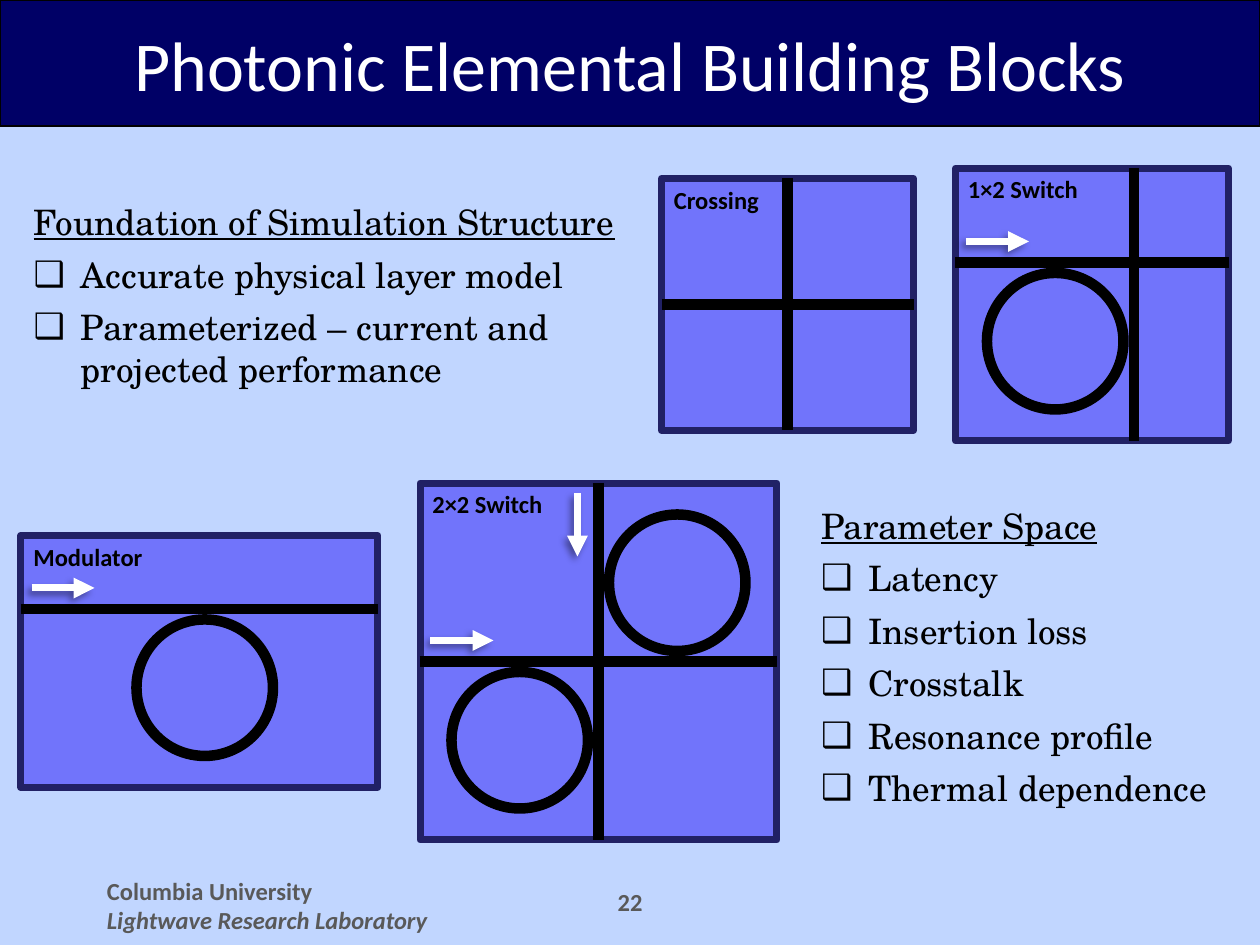
from lxml import etree
from pptx import Presentation
from pptx import util as u
from pptx.dml.color import RGBColor
from pptx.enum import shapes, text
from pptx.oxml import ns

BLACK, WHITE, GREY = "000000", "FFFFFF", "595959"
SANS, SERIF = "Calibri", "TeX Gyre Schola"
RING = 13
ARROW = 6
LABEL = {"name": SANS, "size": u.Pt(14), "bold": True}
LIST = {"name": SERIF, "size": u.Pt(20)}

# Offsets within a device are measured from its top left corner.
DEVICES = [
    {"label": "Modulator", "frame": (2, 51, 34, 24), "rows": [7], "columns": [],
     "rings": [(11, 8)], "arrows": [(1, 5, ARROW, 0)]},
    {"label": "2×2 Switch", "frame": (40, 46, 34, 34), "rows": [17], "columns": [17],
     "rings": [(3, 18), (18, 3)], "arrows": [(1, 15, ARROW, 0), (15, 1, 0, ARROW)]},
    {"label": "Crossing", "frame": (63, 17, 24, 24), "rows": [12], "columns": [12],
     "rings": [], "arrows": []},
    {"label": "1×2 Switch", "frame": (91, 16, 26, 26), "rows": [9], "columns": [17],
     "rings": [(3, 10)], "arrows": [(1, 7, ARROW, 0)]},
]


def grid(*steps):
    """Turn grid steps, twelve to 2.54 cm, into lengths."""
    return [u.Cm(step * 2.54 / 12) for step in steps]


def colour(value):
    return RGBColor.from_string(value)


def add_xml(parent, tag, **attributes):
    return etree.SubElement(parent, ns.qn(tag), attributes)


def place(shape, *steps):
    shape.left, shape.top, shape.width, shape.height = grid(*steps)


def write(para, words, hue, formats):
    span = para.add_run()
    span.text = words
    span.font.color.rgb = colour(hue)
    for name, value in formats.items():
        setattr(span.font, name, value)


def add_label(parent, steps, lines, hue, **options):
    """Add a text box; each line is a pair of words and extra formats."""
    box = parent.add_textbox(*grid(*steps))
    frame = box.text_frame
    frame.word_wrap = True
    frame.vertical_anchor = options.get("anchor", text.MSO_ANCHOR.TOP)
    for index, (words, extra) in enumerate(lines):
        para = frame.add_paragraph() if index else frame.paragraphs[0]
        para.alignment = options.get("align", text.PP_ALIGN.LEFT)
        write(para, words, hue, LABEL | extra)


def add_outline(parent, kind, steps, line, weight, fill=None):
    shape = parent.add_shape(kind, *grid(*steps))
    shape.shadow.inherit = False
    if fill:
        shape.fill.solid()
        shape.fill.fore_color.rgb = colour(fill)
    else:
        shape.fill.background()
    shape.line.color.rgb = colour(line)
    shape.line.width = u.Pt(weight)
    return shape


def add_line(parent, x, y, across, down, hue, weight):
    """Add a straight line and return it with its empty effect list."""
    line = parent.add_connector(shapes.MSO_CONNECTOR.STRAIGHT,
                                *grid(x, y, x + across, y + down))
    line.line.color.rgb = colour(hue)
    line.line.width = u.Pt(weight)
    return line, add_xml(line._element.spPr, "a:effectLst")


def add_arrow(parent, *steps):
    arrow, effects = add_line(parent, *steps, WHITE, 4)
    add_xml(arrow.line._get_or_add_ln(), "a:tailEnd", type="triangle")
    shadow = add_xml(effects, "a:outerShdw", blurRad=str(u.Pt(4)), dist=str(u.Pt(3)),
                     dir=str(135 * 60000), algn="tr", rotWithShape="0")
    shade = add_xml(shadow, "a:srgbClr", val=BLACK)
    add_xml(shade, "a:alpha", val="40000")


def add_device(page, device):
    parent = page.shapes.add_group_shape().shapes
    left, top, width, height = device["frame"]
    add_outline(parent, shapes.MSO_SHAPE.RECTANGLE, device["frame"], "212165", 4, "7174FB")
    for x, y in device["rings"]:
        add_outline(parent, shapes.MSO_SHAPE.OVAL, (left + x, top + y, RING, RING), BLACK, 6)
    for y in device["rows"]:
        add_line(parent, left, top + y, width, 0, BLACK, 6)
    for x in device["columns"]:
        add_line(parent, left + x, top, 0, height, BLACK, 6)
    for x, y, across, down in device["arrows"]:
        add_arrow(parent, left + x, top + y, across, down)
    add_label(parent, (left, top, 17, 4), [(device["label"], {})], BLACK)


def fill_list(body, steps, heading, items):
    place(body, *steps)
    frame = body.text_frame
    frame.auto_size = text.MSO_AUTO_SIZE.NONE
    for index, words in enumerate([heading, *items]):
        para = frame.add_paragraph() if index else frame.paragraphs[0]
        properties = para._p.get_or_add_pPr()
        indent = u.Cm(0.95) if index else 0
        properties.set("marL", str(indent))
        properties.set("indent", str(-indent))
        if index:
            add_xml(properties, "a:buChar", char="❑")
        else:
            add_xml(properties, "a:buNone")
        para.space_before, para.space_after = u.Pt(0), u.Pt(6)
        write(para, words, BLACK, LIST | {"underline": index == 0})


def add_title(page, words):
    title = page.shapes.title
    place(title, 2, 1, 116, 10)
    title.text_frame.vertical_anchor = text.MSO_ANCHOR.MIDDLE
    title.text_frame.auto_size = text.MSO_AUTO_SIZE.NONE
    para = title.text_frame.paragraphs[0]
    para.alignment = text.PP_ALIGN.CENTER
    write(para, words, WHITE, {"name": SANS, "size": u.Pt(40)})
    band = add_outline(page.shapes, shapes.MSO_SHAPE.RECTANGLE, (0, 0, 120, 12),
                       BLACK, 0.75, "000066")
    title._element.addprevious(band._element)


def main():
    deck = Presentation()
    deck.slide_width, deck.slide_height = u.Cm(25.4), u.Cm(19.05)
    page = deck.slides.add_slide(deck.slide_layouts.get_by_name("Two Content"))
    page.background.fill.solid()
    page.background.fill.fore_color.rgb = colour("C1D6FF")

    add_title(page, "Photonic Elemental Building Blocks")
    foundation, parameters = list(page.placeholders)[1:]
    fill_list(foundation, (2, 18.5, 64, 34.5), "Foundation of Simulation Structure",
              ["Accurate physical layer model",
               "Parameterized – current and projected performance"])
    fill_list(parameters, (77, 47.4, 40, 45.6), "Parameter Space",
              ["Latency", "Insertion loss", "Crosstalk", "Resonance profile",
               "Thermal dependence"])
    for device in DEVICES:
        add_device(page, device)

    add_label(page.shapes, (9, 82.8, 45, 6.2),
              [("Columbia University", {}),
               ("Lightwave Research Laboratory", {"italic": True})], GREY)
    add_label(page.shapes, (55, 82.8, 10, 6.2), [("22", {})], GREY,
              anchor=text.MSO_ANCHOR.MIDDLE, align=text.PP_ALIGN.CENTER)
    deck.save("out.pptx")


if __name__ == "__main__":
    main()
